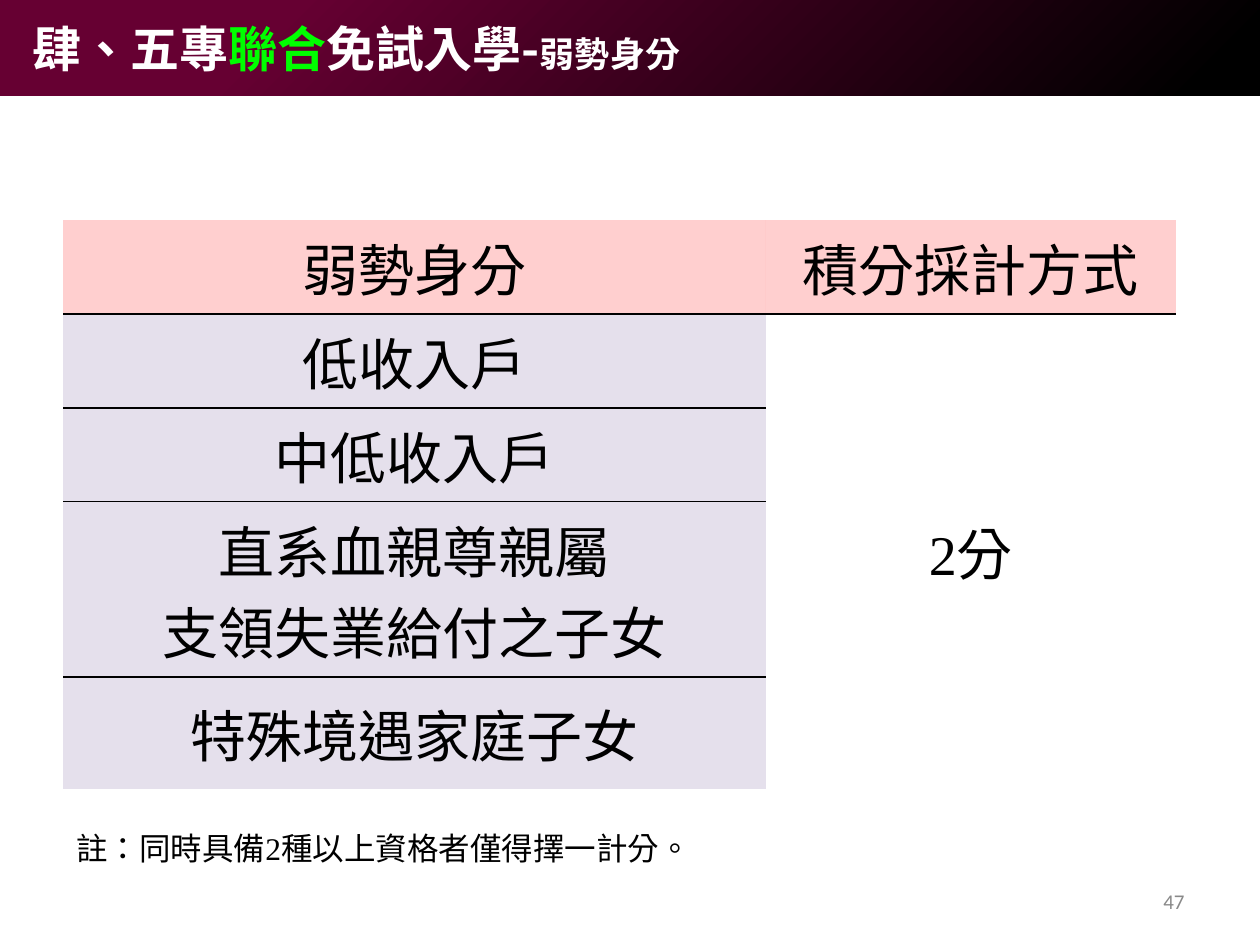
"""Builds the slide on scoring disadvantaged status for five-year college admission."""
from copy import deepcopy
from lxml.etree import SubElement
from pptx import Presentation
from pptx.dml.color import RGBColor
from pptx.enum.shapes import MSO_SHAPE
from pptx.enum.text import MSO_ANCHOR, PP_ALIGN
from pptx.oxml import parse_xml
from pptx.oxml.ns import nsdecls, qn
from pptx.util import Pt

PX = 914400 / 126
COLORS = {"wine": "660032", "black": "000000", "white": "FFFFFF", "green": "00FF00",
          "pink": "FF8989", "purple": "8064A2", "gray": "898989"}
CJK_FONT = "Noto Sans CJK SC"
NO_STYLE = "{2D5ABB26-0587-4C30-8999-92F81FD0307C}"


def px(*lengths):
    return [round(length * PX) for length in lengths]


def add_run(paragraph, text, size, font="Times New Roman", color="black", bold=False):
    run = paragraph.add_run()
    run.text = text
    run.font.size = Pt(size)
    run.font.bold = bold
    run.font.color.rgb = RGBColor.from_string(COLORS[color])
    run.font.name = font
    properties = run._r.get_or_add_rPr()
    properties.set("lang", "zh-TW")
    SubElement(properties, qn("a:ea")).set("typeface", CJK_FONT)


presentation = Presentation()
presentation.slide_width, presentation.slide_height = px(1260, 945)
slide = presentation.slides.add_slide(presentation.slide_layouts[5])
title = slide.shapes.title

banner = slide.shapes.add_shape(MSO_SHAPE.RECTANGLE, *px(0, 0, 1260, 96))
banner.shadow.inherit = False
banner.line.fill.background()
banner.fill.gradient()
banner.fill.gradient_angle = 315
stop_list = banner._element.spPr.find(qn("a:gradFill")).find(qn("a:gsLst"))
stop_list.insert(0, deepcopy(stop_list[0]))
for stop, position, color in zip(banner.fill.gradient_stops, (0.05, 0.22, 0.95),
                                 ("wine", "wine", "black")):
    stop.position = position
    stop.color.rgb = RGBColor.from_string(COLORS[color])
title._element.addprevious(banner._element)

title.left, title.top, title.width, title.height = px(20, 12, 1135, 72)
title.text_frame.vertical_anchor = MSO_ANCHOR.TOP
title.text_frame.word_wrap = True
paragraph = title.text_frame.paragraphs[0]
paragraph.alignment = PP_ALIGN.JUSTIFY
for text, size, color in (("肆、五專", 28, "white"), ("聯合", 28, "green"),
                          ("免試入學-", 28, "white"), ("弱勢身分", 20, "white")):
    add_run(paragraph, text, size, CJK_FONT, color, True)

rows = [
    (["弱勢身分"], ["積分採計方式"]),
    (["低收入戶"], ["2分"]),
    (["中低收入戶"], []),
    (["直系血親尊親屬", "支領失業給付之子女"], []),
    (["特殊境遇家庭子女"], []),
]
table_frame = slide.shapes.add_table(len(rows), 2, *px(63, 220, 1113, 509))
table = table_frame.table
table.first_row = False
table.horz_banding = False
table._tbl.tblPr.find(qn("a:tableStyleId")).text = NO_STYLE
for column, width in zip(table.columns, px(703, 410)):
    column.width = width
for row, height in zip(table.rows, px(82, 82, 82, 151, 112)):
    row.height = height
table.cell(1, 1).merge(table.cell(4, 1))

for row_index, row in enumerate(rows):
    for column_index, lines in enumerate(row):
        cell = table.cell(row_index, column_index)
        cell.vertical_anchor = MSO_ANCHOR.MIDDLE
        for line_index, line in enumerate(lines):
            frame = cell.text_frame
            paragraph = frame.add_paragraph() if line_index else frame.paragraphs[0]
            paragraph.alignment = PP_ALIGN.CENTER
            add_run(paragraph, line, 32)
        is_header = row_index == 0
        if is_header or column_index == 0:
            color, alpha = ("pink", 40000) if is_header else ("purple", 20000)
            cell.fill.solid()
            cell.fill.fore_color.rgb = RGBColor.from_string(COLORS[color])
            fill_color = cell._tc.tcPr.find(qn("a:solidFill"))[0]
            SubElement(fill_color, qn("a:alpha")).set("val", str(alpha))
        else:
            cell.fill.background()
        borders = []
        if row_index == 1 or (row_index > 1 and column_index == 0):
            borders.append("lnT")
        if is_header or (column_index == 0 and row_index < len(rows) - 1):
            borders.append("lnB")
        for position, border in enumerate(borders):
            cell._tc.tcPr.insert(position, parse_xml(
                f'<a:{border} {nsdecls("a")} w="12700"><a:solidFill>'
                f'<a:srgbClr val="{COLORS["black"]}"/></a:solidFill></a:{border}>'))

note = slide.shapes.add_textbox(*px(64, 823, 1131, 50))
note.text_frame.word_wrap = True
add_run(note.text_frame.paragraphs[0], "註：同時具備2種以上資格者僅得擇一計分。", 18)

page_number = slide.shapes.add_textbox(*px(903, 876, 294, 50))
page_number.text_frame.word_wrap = True
page_number.text_frame.vertical_anchor = MSO_ANCHOR.MIDDLE
paragraph = page_number.text_frame.paragraphs[0]
paragraph.alignment = PP_ALIGN.RIGHT
add_run(paragraph, "47", 12, "Calibri", "gray")

presentation.save("out.pptx")
